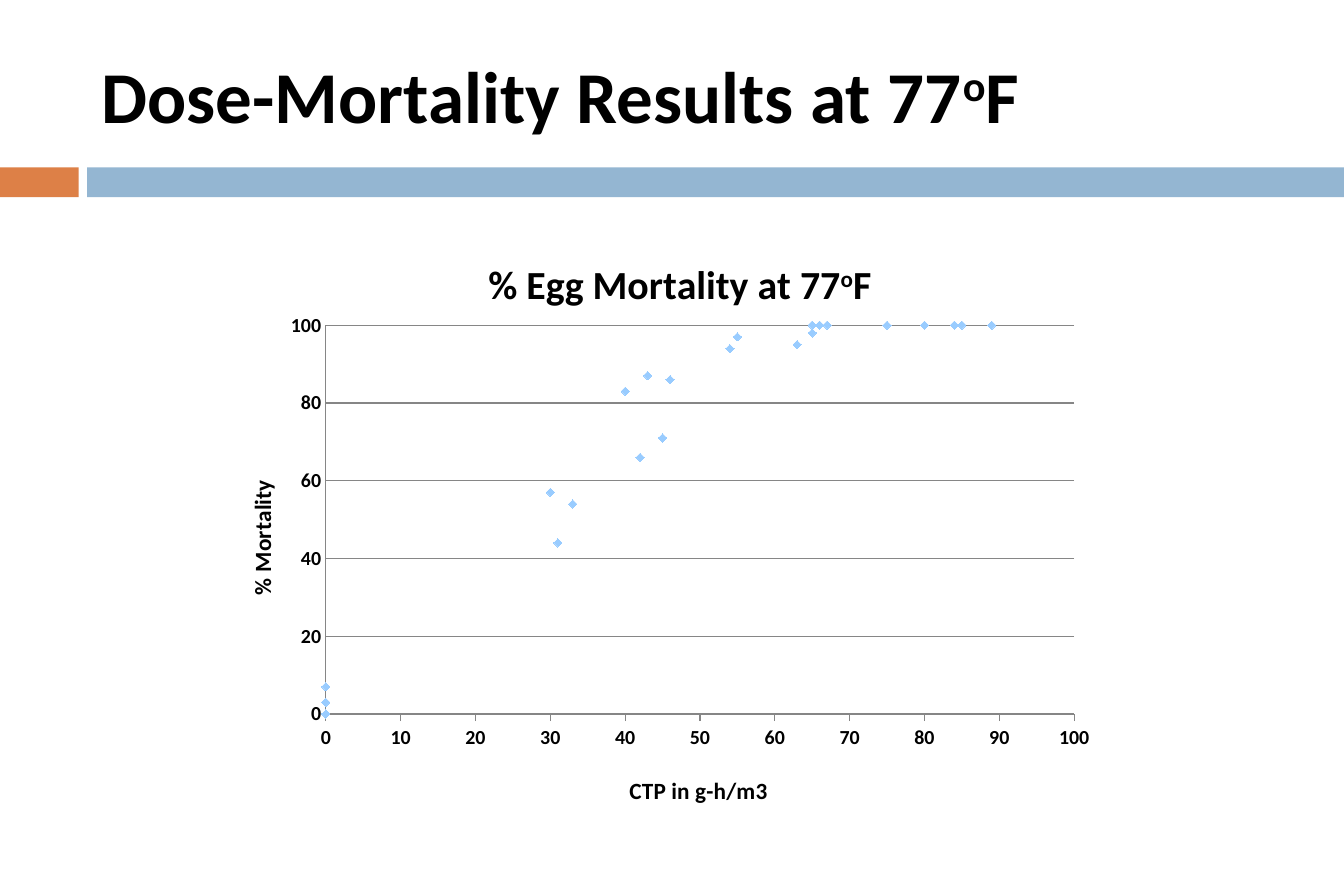
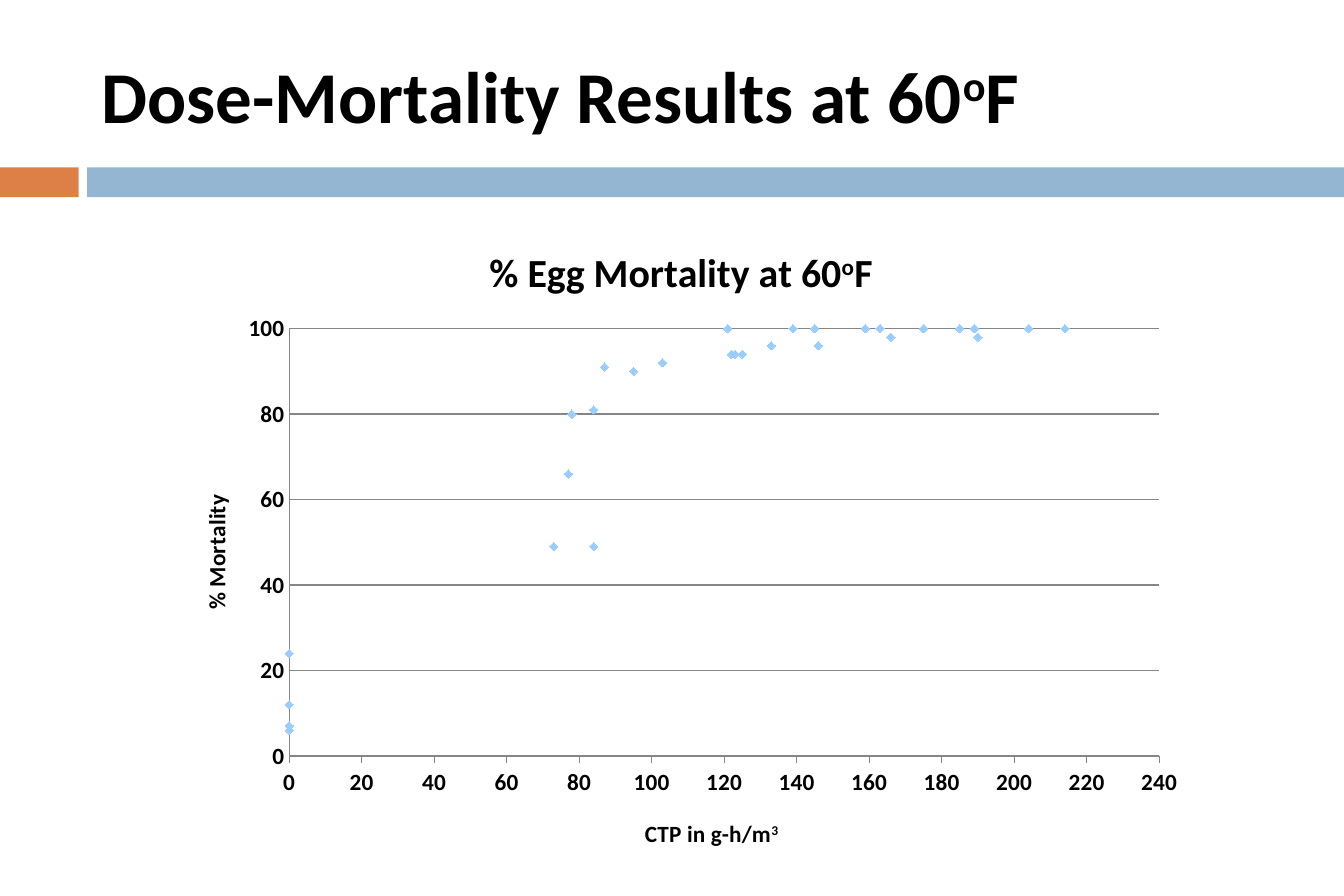
import dataclasses
import typing

import lxml.etree
import pptx
import pptx.chart.axis
import pptx.chart.chart
import pptx.chart.data
import pptx.dml.color
import pptx.enum.chart
import pptx.enum.shapes
import pptx.enum.text
import pptx.oxml.ns
import pptx.presentation
import pptx.slide
import pptx.text.text
import pptx.util

Inches = pptx.util.Inches
Pt = pptx.util.Pt

# Shared look
FONT = "Calibri"
BLACK = "000000"
ORANGE = "DD8047"
BLUE = "94B6D2"
MARKER_BLUE = "99CCFF"
AXIS_GRAY = "868686"
SLIDE_WIDTH, SLIDE_HEIGHT = 11.25, 7.5
BAND_TOP, BAND_HEIGHT = 1.4, 0.25


class TextPart(typing.NamedTuple):
    text: str
    raised: bool = False


class Band(typing.NamedTuple):
    left: float
    width: float
    color: str


BANDS = (Band(0, 0.66, ORANGE), Band(0.73, SLIDE_WIDTH - 0.73, BLUE))


@dataclasses.dataclass
class DoseSlide:
    temperature: str
    frame: tuple[float, float, float, float]
    plot_box: tuple[float, float, float, float]  # fractions of the chart
    heading_at: tuple[float, float]
    dose_title_at: tuple[float, float]
    mortality_title_at: tuple[float, float]
    dose_title: tuple[TextPart, ...]
    dose_max: int
    dose_step: int
    tick_size: int
    doses: tuple[int, ...]
    mortality: tuple[int, ...]

    def heading(self, subject: str) -> tuple[TextPart, ...]:
        return (TextPart(f"{subject} at {self.temperature}"),
                TextPart("o", True), TextPart("F"))


DOSE_SLIDES = (
    DoseSlide(
        temperature="77",
        frame=(1.71, 1.83, 7.83, 5.25),
        plot_box=(0.13, 0.17, 0.8, 0.62),
        heading_at=(0.3, 0.06),
        dose_title_at=(0.45, 0.88),
        mortality_title_at=(0.04, 0.41),
        dose_title=(TextPart("CTP in g-h/m3"),),
        dose_max=100, dose_step=10, tick_size=12,
        doses=(0, 0, 0, 0, 43, 30, 33, 31, 46, 42, 45, 40,
               65, 63, 54, 55, 67, 75, 66, 65, 85, 89, 80, 84),
        mortality=(7, 0, 3, 3, 87, 57, 54, 44, 86, 66, 71, 83,
                   100, 95, 94, 97, 100, 100, 100, 98, 100, 100, 100, 100),
    ),
    DoseSlide(
        temperature="60",
        frame=(1.38, 1.83, 8.67, 5.42),
        plot_box=(0.12, 0.17, 0.84, 0.66),
        heading_at=(0.31, 0.04),
        dose_title_at=(0.46, 0.92),
        mortality_title_at=(0.03, 0.42),
        dose_title=(TextPart("CTP in g-h/m"), TextPart("3", True)),
        dose_max=240, dose_step=20, tick_size=14,
        doses=(0, 0, 0, 0, 87, 78, 84, 84, 95, 103, 77, 73, 121, 122, 125, 123,
               145, 139, 146, 133, 163, 163, 159, 166, 175, 163, 185, 190,
               189, 204, 214, 189),
        mortality=(7, 24, 12, 6, 91, 80, 81, 49, 90, 92, 66, 49, 100, 94, 94, 94,
                   100, 100, 96, 96, 100, 100, 100, 98, 100, 100, 100, 98,
                   100, 100, 100, 100),
    ),
)


def rgb(color: str) -> pptx.dml.color.RGBColor:
    return pptx.dml.color.RGBColor.from_string(color)


def style_font(font: pptx.text.text.Font, size: float, bold: bool = True) -> None:
    font.name = FONT
    font.size = Pt(size)
    font.bold = bold
    font.color.rgb = rgb(BLACK)


def write_parts(frame: pptx.text.text.TextFrame,
                parts: tuple[TextPart, ...], size: float) -> None:
    paragraph = frame.paragraphs[0]
    for part in parts:
        run = paragraph.add_run()
        run.text = part.text
        style_font(run.font, size)
        if part.raised:
            run._r.get_or_add_rPr().set("baseline", "30000")


def place_in_chart(owner: lxml.etree._Element, index: int,
                   box: tuple[float, ...], inner: bool = False) -> None:
    """Set a manual layout in fractions of the chart: x, y and maybe w, h."""
    qn = pptx.oxml.ns.qn
    for former in owner.findall(qn("c:layout")):
        owner.remove(former)
    layout = lxml.etree.Element(qn("c:layout"))
    owner.insert(index, layout)
    manual = lxml.etree.SubElement(layout, qn("c:manualLayout"))
    settings = [("layoutTarget", "inner")] if inner else []
    settings += [("xMode", "edge"), ("yMode", "edge")]
    settings += [(key, str(value)) for key, value in zip("xywh", box)]
    for key, value in settings:
        lxml.etree.SubElement(manual, qn(f"c:{key}")).set("val", value)


def format_axis(axis: pptx.chart.axis.ValueAxis, maximum: int, step: int,
                tick_size: int, title: tuple[TextPart, ...],
                title_at: tuple[float, float]) -> None:
    axis.minimum_scale = 0
    axis.maximum_scale = maximum
    axis.major_unit = step
    axis.minor_tick_mark = pptx.enum.chart.XL_TICK_MARK.NONE
    axis.format.line.color.rgb = rgb(AXIS_GRAY)
    axis.format.line.width = Pt(0.75)
    axis.tick_labels.number_format = "General"
    axis.tick_labels.number_format_is_linked = False
    style_font(axis.tick_labels.font, tick_size)
    write_parts(axis.axis_title.text_frame, title, 14)
    place_in_chart(axis.axis_title._element, 1, title_at)


def add_bands(slide: pptx.slide.Slide) -> None:
    for band in BANDS:
        bar = slide.shapes.add_shape(
            pptx.enum.shapes.MSO_SHAPE.RECTANGLE, Inches(band.left),
            Inches(BAND_TOP), Inches(band.width), Inches(BAND_HEIGHT))
        bar.shadow.inherit = False
        bar.fill.solid()
        bar.fill.fore_color.rgb = rgb(band.color)
        bar.line.fill.background()


def set_title(slide: pptx.slide.Slide, parts: tuple[TextPart, ...]) -> None:
    title = slide.shapes.title
    title.left, title.top = Inches(0.75), Inches(0.25)
    title.width, title.height = Inches(10.03), Inches(1.08)
    frame = title.text_frame
    frame.word_wrap = True
    frame.vertical_anchor = pptx.enum.text.MSO_ANCHOR.MIDDLE
    frame.paragraphs[0].alignment = pptx.enum.text.PP_ALIGN.LEFT
    write_parts(frame, parts, 44)


def add_mortality_chart(slide: pptx.slide.Slide, content: DoseSlide) -> None:
    data = pptx.chart.data.XyChartData()
    readings = data.add_series("Series 1")
    for dose, killed in zip(content.doses, content.mortality):
        readings.add_data_point(dose, killed)
    chart = slide.shapes.add_chart(
        pptx.enum.chart.XL_CHART_TYPE.XY_SCATTER,
        *(Inches(length) for length in content.frame), data).chart
    style_font(chart.font, 10, bold=False)
    chart.has_legend = False

    # Heading and plot area
    chart.has_title = True
    write_parts(chart.chart_title.text_frame,
                content.heading("% Egg Mortality"), 24)
    place_in_chart(chart.chart_title._element, 1, content.heading_at)
    place_in_chart(chart._chartSpace.chart.plotArea, 0, content.plot_box, inner=True)

    # Axes
    tick_mark = pptx.enum.chart.XL_TICK_MARK
    dose_axis, mortality_axis = chart.category_axis, chart.value_axis
    format_axis(dose_axis, content.dose_max, content.dose_step,
                content.tick_size, content.dose_title, content.dose_title_at)
    format_axis(mortality_axis, 100, 20, content.tick_size,
                (TextPart("% Mortality"),), content.mortality_title_at)
    dose_axis.major_tick_mark = tick_mark.OUTSIDE
    dose_axis.has_major_gridlines = False
    mortality_axis.major_tick_mark = tick_mark.INSIDE
    mortality_axis.has_major_gridlines = True
    gridline = mortality_axis.major_gridlines.format.line
    gridline.color.rgb = rgb(AXIS_GRAY)
    gridline.width = Pt(0.75)

    # Data points
    plot = chart.plots[0]
    plot.vary_by_categories = False
    series = plot.series[0]
    series.format.line.fill.background()
    marker = series.marker
    marker.style = pptx.enum.chart.XL_MARKER_STYLE.DIAMOND
    marker.size = 5
    marker.format.fill.solid()
    marker.format.fill.fore_color.rgb = rgb(MARKER_BLUE)
    marker.format.line.color.rgb = rgb(MARKER_BLUE)


def add_dose_slide(deck: pptx.presentation.Presentation, content: DoseSlide) -> None:
    slide = deck.slides.add_slide(deck.slide_layouts.get_by_name("Title Only"))
    add_bands(slide)
    set_title(slide, content.heading("Dose-Mortality Results"))
    add_mortality_chart(slide, content)


def main() -> None:
    deck = pptx.Presentation()
    deck.slide_width = Inches(SLIDE_WIDTH)
    deck.slide_height = Inches(SLIDE_HEIGHT)
    for content in DOSE_SLIDES:
        add_dose_slide(deck, content)
    deck.save("out.pptx")


if __name__ == "__main__":
    main()
